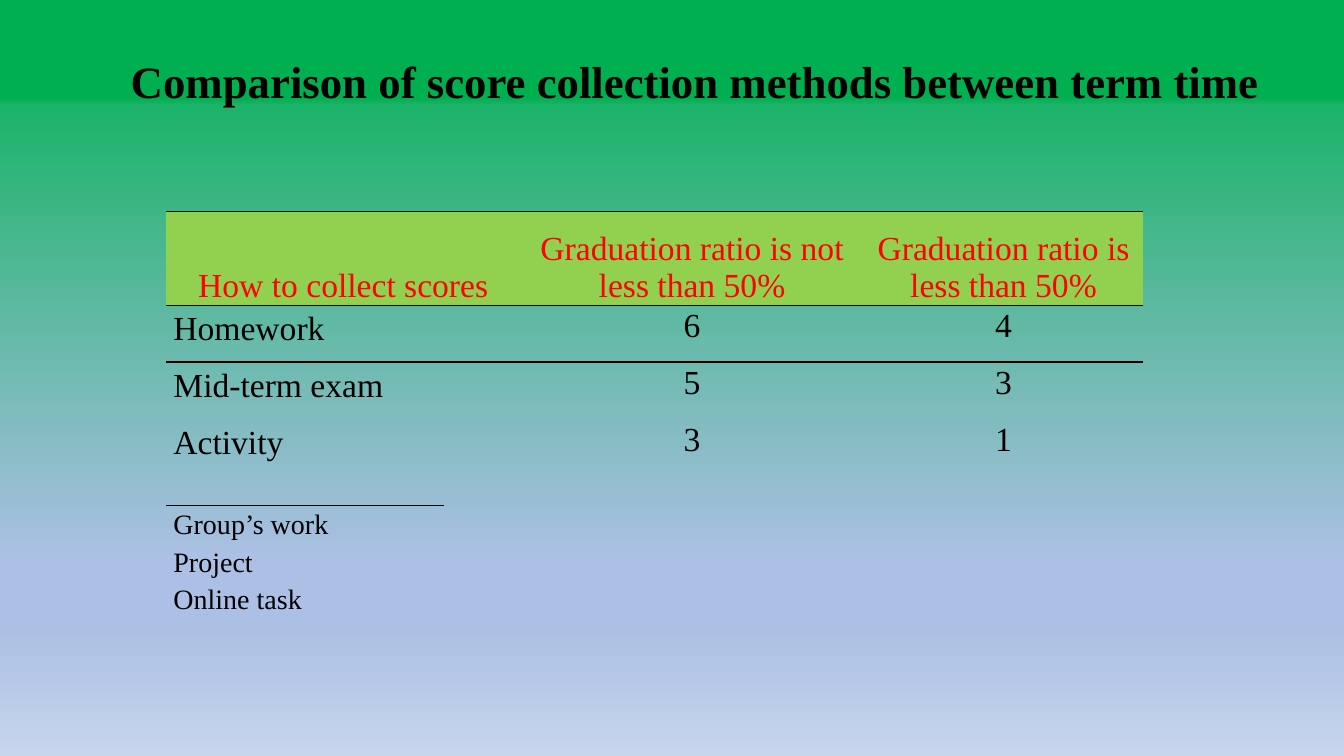
from pptx import Presentation
from pptx.dml.color import RGBColor
from pptx.enum.text import MSO_ANCHOR, MSO_AUTO_SIZE, PP_ALIGN
from pptx.oxml import parse_xml
from pptx.oxml.ns import nsdecls, qn
from pptx.util import Cm, Pt

TOP, MIDDLE, BOTTOM = MSO_ANCHOR.TOP, MSO_ANCHOR.MIDDLE, MSO_ANCHOR.BOTTOM
LEFT, CENTER = PP_ALIGN.LEFT, PP_ALIGN.CENTER
TITLE_ONLY = 5
FONT = "Times New Roman"
NO_STYLE = "{2D5ABB26-0587-4C30-8999-92F81FD0307C}"
COLORS = {"text": "000000", "header": "FF0000", "header_fill": "92D050"}
GRADIENT = [(13, "00B050"), (14, "1EB36A"), (74, "ABC0E4"),
            (83, "ABC0E4"), (100, "C7D5ED")]
SCORES = [
    ("How to collect scores", "Graduation ratio is not less than 50%",
     "Graduation ratio is less than 50%"),
    ("Homework", "6", "4"),
    ("Mid-term exam", "5", "3"),
    ("Activity", "3", "1"),
]
OTHER_METHODS = [("Group’s work",), ("Project",), ("Online task",)]


def set_background(s):
    """Fill the slide background with the vertical gradient."""
    fill = s.background.fill
    fill.gradient()
    fill.gradient_angle = 270
    stops = next(s.element.iter(qn("a:gsLst")))
    for stop in list(stops):
        stops.remove(stop)
    for pos, color in GRADIENT:
        stops.append(parse_xml(
            f'<a:gs {nsdecls("a")} pos="{pos * 1000}">'
            f'<a:srgbClr val="{color}"/></a:gs>'))


def add_text(p, text, size, color, bold=False):
    """Add one formatted run to a paragraph."""
    r = p.add_run()
    r.text = text
    r.font.name = FONT
    r.font.size = Pt(size)
    r.font.bold = bold
    r.font.color.rgb = RGBColor.from_string(COLORS[color])


def add_title(s, text, left, top, width, height):
    """Place the slide title in the given box."""
    sp = s.shapes.title
    sp.left, sp.top, sp.width, sp.height = left, top, width, height
    tf = sp.text_frame
    tf.word_wrap = False
    tf.auto_size = MSO_AUTO_SIZE.NONE
    tf.vertical_anchor = MIDDLE
    p = tf.paragraphs[0]
    p.alignment = CENTER
    add_text(p, text, 32, "text", bold=True)


def set_borders(cell, sides):
    """Draw thin lines on the named sides of a cell."""
    tc_pr = cell._tc.get_or_add_tcPr()
    for i, side in enumerate(sides):
        tc_pr.insert(i, parse_xml(
            f'<a:ln{side} {nsdecls("a")} w="12700"><a:solidFill>'
            f'<a:srgbClr val="{COLORS["text"]}"/></a:solidFill></a:ln{side}>'))


def fill_cell(cell, text, size, header, first_col):
    """Write and format one table cell."""
    cell.margin_left = Cm(0.18 if first_col else 0.28)
    cell.margin_right = Cm(0.18)
    cell.margin_top = cell.margin_bottom = 0
    p = cell.text_frame.paragraphs[0]
    p.alignment = LEFT if first_col and not header else CENTER
    if header:
        cell.vertical_anchor = BOTTOM
        cell.fill.solid()
        cell.fill.fore_color.rgb = RGBColor.from_string(COLORS["header_fill"])
    else:
        cell.vertical_anchor = TOP if first_col else MIDDLE
        cell.fill.background()
        p.line_spacing = 1.15 if first_col else Pt(16)
    add_text(p, text, size, "header" if header else "text")


def add_table(s, data, left, top, col_widths, row_heights, size, has_header):
    """Place a table whose rows and columns have the given sizes."""
    frame = s.shapes.add_table(len(data), len(col_widths), left, top,
                               sum(col_widths), sum(row_heights))
    table = frame.table
    table.first_row = has_header
    table.horz_banding = False
    next(table._tbl.iter(qn("a:tableStyleId"))).text = NO_STYLE
    for col, width in zip(table.columns, col_widths):
        col.width = width
    for row, height in zip(table.rows, row_heights):
        row.height = height
    for i, texts in enumerate(data):
        header = has_header and i == 0
        for j, text in enumerate(texts):
            cell = table.cell(i, j)
            fill_cell(cell, text, size, header, j == 0)
            if header:
                set_borders(cell, "TB")
            elif i == int(has_header):
                set_borders(cell, "T")


def main():
    """Build the slide and save it."""
    prs = Presentation()
    prs.slide_width, prs.slide_height = Cm(33.87), Cm(19.05)
    s = prs.slides.add_slide(prs.slide_layouts[TITLE_ONLY])
    set_background(s)
    add_title(s, "Comparison of score collection methods between term time",
              Cm(2.92), Cm(1.22), Cm(29.2), Cm(1.63))
    left = Cm(4.19)
    add_table(s, SCORES, left, Cm(5.33), [Cm(8.92), Cm(8.56), Cm(7.14)],
              [Cm(2.36)] + [Cm(1.43)] * 3, 24, True)
    add_table(s, OTHER_METHODS, left, Cm(12.73), [Cm(7.01)],
              [Cm(0.94)] * 3, 20, False)
    prs.save("out.pptx")


if __name__ == "__main__":
    main()
